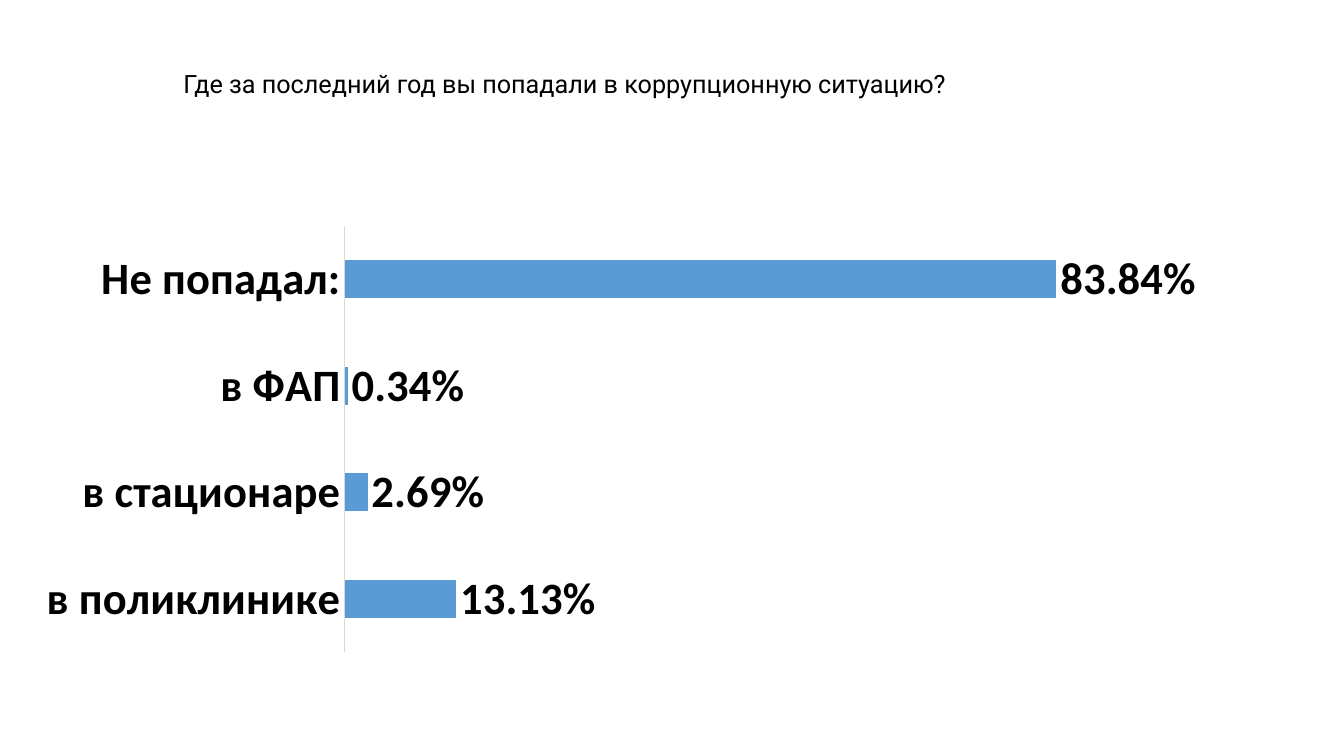
from dataclasses import dataclass

from lxml.etree import SubElement
from pptx import Presentation
from pptx.chart.data import CategoryChartData
from pptx.dml.color import RGBColor
from pptx.enum.chart import XL_CHART_TYPE, XL_LABEL_POSITION, XL_TICK_LABEL_POSITION, XL_TICK_MARK
from pptx.enum.text import MSO_ANCHOR, MSO_AUTO_SIZE, PP_ALIGN
from pptx.oxml.ns import qn
from pptx.util import Inches, Pt


@dataclass(frozen=True)
class Theme:
    ink: RGBColor = RGBColor(0x00, 0x00, 0x00)
    bar: RGBColor = RGBColor(0x5B, 0x9B, 0xD5)
    axis: RGBColor = RGBColor(0xD9, 0xD9, 0xD9)
    title_font: str = "Roboto"
    chart_font: str = "Calibri"
    title_size: int = 18
    chart_size: int = 32


theme = Theme()


def style_font(font, name, size, bold=False):
    font.name, font.size, font.bold = name, Pt(size), bold
    font.color.rgb = theme.ink


prs = Presentation()
prs.slide_width, prs.slide_height = Inches(13.33), Inches(7.5)
W, H = prs.slide_width, prs.slide_height
s = prs.slides.add_slide(prs.slide_layouts[5])

# Question
title = s.shapes.title
title.left, title.top = int(W * 0.129), int(H * 0.084)
title.width, title.height = int(W * 0.761), int(H * 0.053)
tf = title.text_frame
tf.word_wrap = True
tf.auto_size = MSO_AUTO_SIZE.SHAPE_TO_FIT_TEXT
tf.vertical_anchor = MSO_ANCHOR.TOP
p = tf.paragraphs[0]
p.alignment = PP_ALIGN.LEFT
r = p.add_run()
r.text = "Где за последний год вы попадали в коррупционную ситуацию?"
style_font(r.font, theme.title_font, theme.title_size)

# Answers, listed from the bottom bar up
answers = {
    "в поликлинике": 0.1313,
    "в стационаре": 0.0269,
    "в ФАП": 0.0034,
    "Не попадал:": 0.8384,
}
data = CategoryChartData(number_format="0.00%")
data.categories = list(answers)
data.add_series("Series 1", list(answers.values()))
chart = s.shapes.add_chart(
    XL_CHART_TYPE.BAR_CLUSTERED,
    int(W * 0.03), int(H * 0.287), int(W * 0.86), int(H * 0.588), data,
).chart
chart.has_legend = False
chart.has_title = False
style_font(chart.font, theme.chart_font, theme.chart_size, bold=True)

plot = chart.plots[0]
plot.gap_width = 182
plot.vary_by_categories = False
bars = plot.series[0].format.fill
bars.solid()
bars.fore_color.rgb = theme.bar

plot.has_data_labels = True
labels = plot.data_labels
labels.show_value = True
labels.position = XL_LABEL_POSITION.OUTSIDE_END
labels.number_format, labels.number_format_is_linked = "0.00%", False
style_font(labels.font, theme.chart_font, theme.chart_size, bold=True)

cat = chart.category_axis
cat.major_tick_mark = cat.minor_tick_mark = XL_TICK_MARK.NONE
cat.tick_label_position = XL_TICK_LABEL_POSITION.NEXT_TO_AXIS
cat.format.line.color.rgb = theme.axis
cat.format.line.width = Pt(0.75)
style_font(cat.tick_labels.font, theme.chart_font, theme.chart_size, bold=True)

val = chart.value_axis
val.visible = False
val.has_major_gridlines = False
val.minimum_scale, val.maximum_scale = 0, 0.9
val.tick_labels.number_format = "0.00%"
val.tick_labels.number_format_is_linked = False

# Plot area as shares of the chart, leaving room for the labels
area = chart.element.find(".//" + qn("c:plotArea"))
for old in area.findall(qn("c:layout")):
    area.remove(old)
layout = area.makeelement(qn("c:layout"))
area.insert(0, layout)
manual = SubElement(layout, qn("c:manualLayout"))
for tag, value in (
    ("layoutTarget", "inner"), ("xMode", "edge"), ("yMode", "edge"),
    ("x", "0.265"), ("y", "0.02"), ("w", "0.665"), ("h", "0.96"),
):
    SubElement(manual, qn(f"c:{tag}")).set("val", value)

prs.save("out.pptx")
